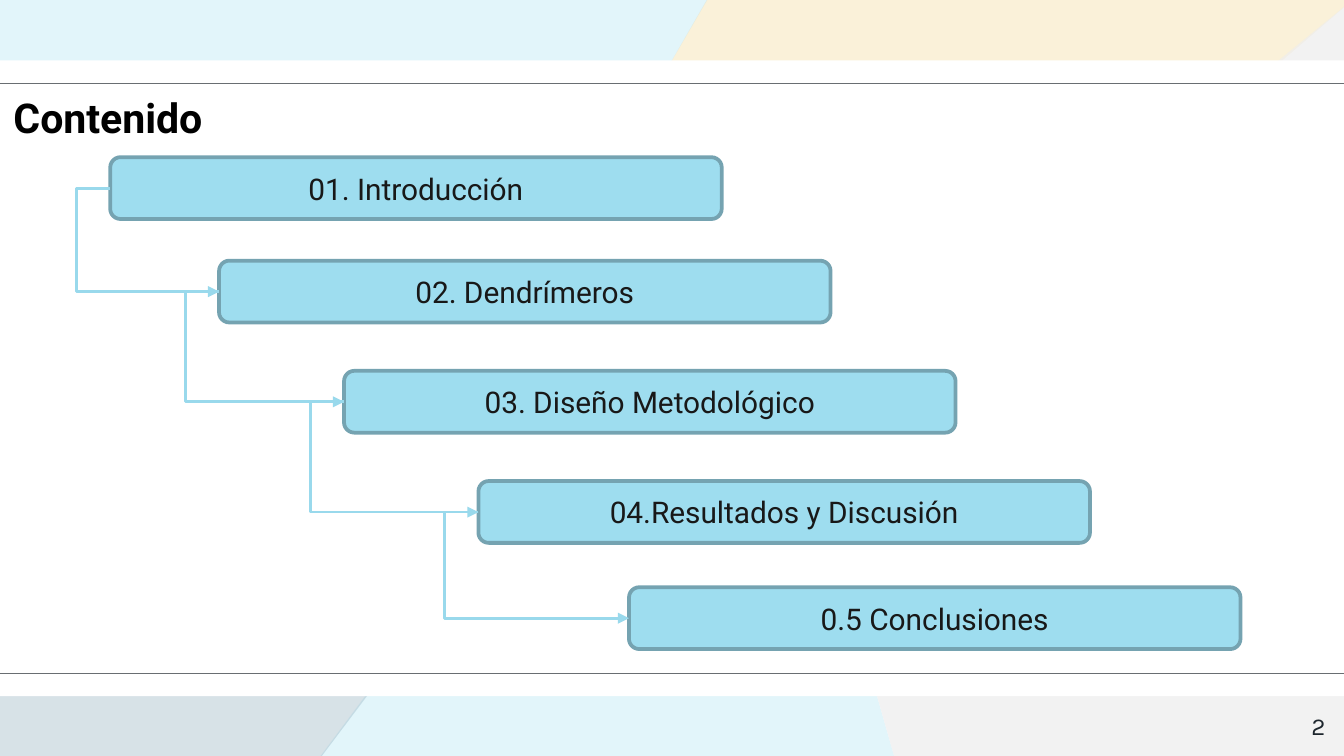
from dataclasses import dataclass
from itertools import pairwise

from pptx import Presentation
from pptx.dml.color import RGBColor
from pptx.enum.shapes import MSO_CONNECTOR as Connector, MSO_SHAPE as Shape
from pptx.enum.text import MSO_ANCHOR as Anchor, MSO_AUTO_SIZE as AutoSize, PP_ALIGN as Align
from pptx.oxml.ns import qn
from pptx.util import Emu, Pt
from lxml.etree import SubElement

PX = 9144  # EMU per px: 100 px to the inch
WIDTH = 1000
LEFT_SIDE = 1


@dataclass(frozen=True)
class Theme:
    white: str = "FFFFFF"
    rule: str = "696E72"
    title: str = "000000"
    number: str = "1D262D"
    box: str = "9EDDEF"
    box_line: str = "75A3B1"
    box_text: str = "181818"
    arrow: str = "99D9EC"
    sand: str = "F7E5B7"
    slate: str = "96B3C1"
    mist: str = "EEEEEE"
    font: str = "Roboto"
    number_font: str = "Karla"
    title_size: int = 22
    box_size: int = 16
    number_size: int = 13


THEME = Theme()

# Background facets: colour, opacity in percent, corners
FACETS = [
    (THEME.box, 29, [(221, 586), (672, 586), (547, 149)]),
    (THEME.sand, 52, [(1010, -3), (1010, -14), (534, -14), (433, 161), (917, 77)]),
    (THEME.slate, 38, [(-8, 593), (-8, 321), (549, 152), (212, 599)]),
    (THEME.box, 29, [(-7, 321), (-7, -10), (532, -10), (416, 189)]),
    (THEME.mist, 71, [(672, 586), (1010, 586), (1010, -3), (600, 333)]),
]

# Steps of the outline: left, top, label
STEPS = [
    (82, 117, "01. Introducción"),
    (163, 194, "02. Dendrímeros"),
    (256, 276, "03. Diseño Metodológico"),
    (356, 358, "04.Resultados y Discusión"),
    (468, 437, "0.5 Conclusiones"),
]
STEP_WIDTH, STEP_HEIGHT = 455, 46
ELBOW_REACH = 25  # how far an arrow swings out to the left


def px(*lengths):
    return [Emu(length * PX) for length in lengths]


def colour(value):
    return RGBColor.from_string(value)


def paint(shape, fill):
    shape.shadow.inherit = False
    shape.fill.solid()
    shape.fill.fore_color.rgb = colour(fill)
    shape.line.fill.background()


def write(shape, text, font, size, ink, align=Align.LEFT, anchor=Anchor.TOP, bold=False):
    frame = shape.text_frame
    frame.word_wrap = True
    frame.auto_size = AutoSize.NONE
    frame.vertical_anchor = anchor
    frame.margin_left, frame.margin_top, frame.margin_right, frame.margin_bottom = px(10, 10, 10, 10)
    paragraph = frame.paragraphs[0]
    paragraph.alignment = align
    run = paragraph.add_run()
    run.text = text
    run.font.name, run.font.size, run.font.bold = font, Pt(size), bold
    run.font.color.rgb = colour(ink)


def add_facet(slide, fill, opacity, corners):
    builder = slide.shapes.build_freeform(*corners[0], scale=PX)
    builder.add_line_segments(corners[1:], close=True)
    shape = builder.convert_to_shape()
    paint(shape, fill)
    solid = shape.fill._xPr.find(qn("a:solidFill"))
    SubElement(solid[0], qn("a:alpha")).set("val", str(opacity * 1000))


def add_line(slide, kind, start, end, ink, width):
    line = slide.shapes.add_connector(kind, *px(*start, *end))
    line.line.color.rgb = colour(ink)
    line.line.width = Pt(width)
    return line


def flatten(line):
    SubElement(line._element.spPr, qn("a:effectLst"))


def add_rule(slide, top):
    flatten(add_line(slide, Connector.STRAIGHT, (-12, top), (1004, top), THEME.rule, 0.75))


def add_step(slide, left, top, label):
    box = slide.shapes.add_shape(Shape.ROUNDED_RECTANGLE, *px(left, top, STEP_WIDTH, STEP_HEIGHT))
    paint(box, THEME.box)
    box.line.color.rgb = colour(THEME.box_line)
    box.line.width = Pt(2)
    write(box, label, THEME.font, THEME.box_size, THEME.box_text, Align.CENTER, Anchor.MIDDLE)
    return box


def add_arrow(slide, source, target):
    arrow = add_line(slide, Connector.ELBOW, (0, 0), (1, 1), THEME.arrow, 1.5)
    arrow.begin_connect(source, LEFT_SIDE)
    arrow.end_connect(target, LEFT_SIDE)
    # The bend is measured as a share of the connector's width
    bend = round(-ELBOW_REACH * PX / arrow.width * 100000)
    guides = arrow._element.spPr.find(qn("a:prstGeom")).get_or_add_avLst()
    SubElement(guides, qn("a:gd"), name="adj1", fmla=f"val {bend}")
    SubElement(arrow.line._get_or_add_ln(), qn("a:tailEnd"), type="triangle")
    flatten(arrow)


def add_backdrop(slide):
    for facet in FACETS:
        add_facet(slide, *facet)
    panel = slide.shapes.add_shape(Shape.RECTANGLE, *px(-3, 45, 1005, 473))
    paint(panel, THEME.white)
    for top in (62, 501):
        add_rule(slide, top)


def set_title(slide, text):
    title = slide.shapes.title
    title.left, title.top, title.width, title.height = px(0, 59, 682, 58)
    write(title, text, THEME.font, THEME.title_size, THEME.title, bold=True)
    # Bring the title in front of the backdrop
    slide.shapes._spTree.append(title._element)


def add_number(slide, text):
    box = slide.shapes.add_textbox(*px(936, 519, 60, 43))
    write(box, text, THEME.number_font, THEME.number_size, THEME.number, Align.RIGHT)


def main():
    presentation = Presentation()
    presentation.slide_width = Emu(WIDTH * PX)
    presentation.slide_height = Emu(WIDTH * PX * 9 // 16)
    slide = presentation.slides.add_slide(presentation.slide_layouts[5])

    add_backdrop(slide)
    set_title(slide, "Contenido")
    add_number(slide, "2")

    # Staircase of steps, each joined to the next
    boxes = [add_step(slide, *step) for step in STEPS]
    for source, target in pairwise(boxes):
        add_arrow(slide, source, target)

    presentation.save("out.pptx")


if __name__ == "__main__":
    main()
